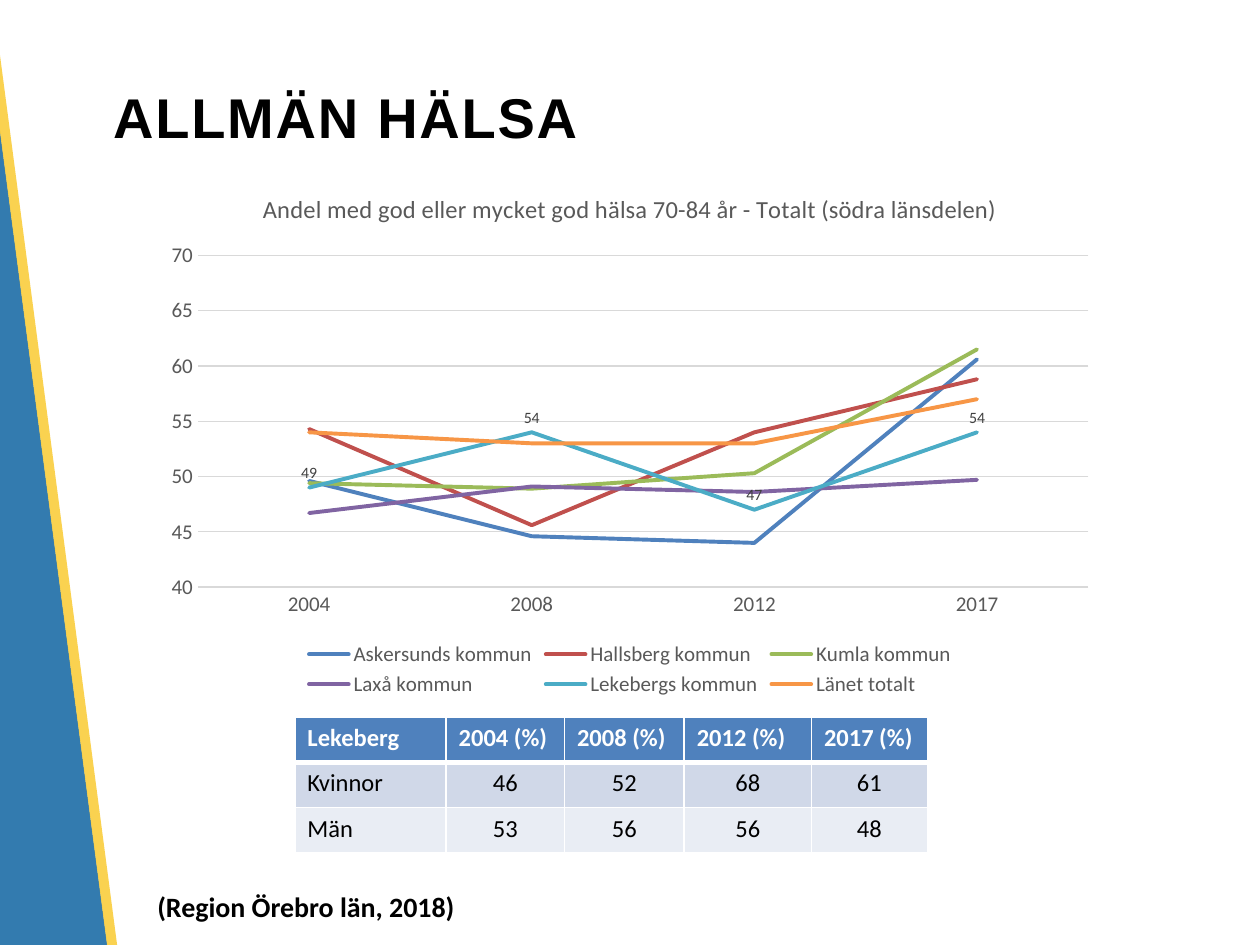
from typing import NamedTuple

from lxml import etree
from pptx import Presentation
from pptx.chart.data import CategoryChartData
from pptx.dml.color import RGBColor
from pptx.enum.chart import XL_CHART_TYPE as ChartType
from pptx.enum.chart import XL_LABEL_POSITION as LabelPosition
from pptx.enum.chart import XL_LEGEND_POSITION as LegendPosition
from pptx.enum.chart import XL_MARKER_STYLE as MarkerStyle
from pptx.enum.chart import XL_TICK_MARK as TickMark
from pptx.enum.shapes import MSO_SHAPE as Shape
from pptx.enum.text import MSO_ANCHOR as Anchor
from pptx.enum.text import PP_ALIGN as Align
from pptx.oxml.ns import qn
from pptx.util import Inches, Pt

BLACK = RGBColor(0x00, 0x00, 0x00)
WHITE = RGBColor(0xFF, 0xFF, 0xFF)
BLUE = RGBColor(0x00, 0x5B, 0x9C)
YELLOW = RGBColor(0xFA, 0xC8, 0x28)
GRID = RGBColor(0xD9, 0xD9, 0xD9)
AXIS_TEXT = RGBColor(0x59, 0x59, 0x59)
LABEL_TEXT = RGBColor(0x40, 0x40, 0x40)
HEADER_FILL = RGBColor(0x4F, 0x81, 0xBD)
BAND_FILLS = (RGBColor(0xD0, 0xD8, 0xE8), RGBColor(0xE9, 0xED, 0xF4))


class Stripe(NamedTuple):
    left: float
    top: float
    width: float
    height: float
    color: RGBColor
    opacity: int


class TextItem(NamedTuple):
    left: float
    top: float
    width: float
    height: float
    text: str
    font: str
    size: int
    anchor: Anchor


class Series(NamedTuple):
    name: str
    values: tuple
    color: RGBColor


STRIPES = (
    Stripe(-0.52, -1.64, 0.91, 11.33, BLUE, 80),
    Stripe(0.38, -1.73, 0.08, 11.32, YELLOW, 81),
)
TITLE = TextItem(0.8, 0.3, 8.65, 1.25, "ALLMÄN HÄLSA", "Arial", 32, Anchor.MIDDLE)
SOURCE = TextItem(1.15, 7.01, 2.72, 0.37, "(Region Örebro län, 2018)",
                  "Calibri", 16, Anchor.TOP)

CHART_TITLE = "Andel med god eller mycket god hälsa 70-84 år - Totalt (södra länsdelen)"
YEARS = ("2004", "2008", "2012", "2017")
LABELLED = "Lekebergs kommun"
SERIES = (
    Series("Askersunds kommun", (49.6, 44.6, 44, 60.6), RGBColor(0x4F, 0x81, 0xBD)),
    Series("Hallsberg kommun", (54.3, 45.6, 54, 58.8), RGBColor(0xC0, 0x50, 0x4D)),
    Series("Kumla kommun", (49.4, 48.9, 50.3, 61.5), RGBColor(0x9B, 0xBB, 0x59)),
    Series("Laxå kommun", (46.7, 49.1, 48.6, 49.7), RGBColor(0x80, 0x64, 0xA2)),
    Series(LABELLED, (49, 54, 47, 54), RGBColor(0x4B, 0xAC, 0xC6)),
    Series("Länet totalt", (54, 53, 53, 57), RGBColor(0xF7, 0x96, 0x46)),
)

COLUMN_WIDTHS = (1.2, 0.94, 0.95, 1.01, 0.92)
ROW_HEIGHT = 0.36
TABLE_ROWS = (
    ("Lekeberg", *(f"{year} (%)" for year in YEARS)),
    ("Kvinnor", "46", "52", "68", "61"),
    ("Män", "53", "56", "56", "48"),
)


def style_font(font, size: float, color: RGBColor, bold: bool = False,
               name: str = "Calibri") -> None:
    font.name, font.size, font.bold = name, Pt(size), bold
    font.color.rgb = color


def add_stripe(page, stripe: Stripe) -> None:
    shape = page.shapes.add_shape(Shape.RECTANGLE, *map(Inches, stripe[:4]))
    shape.rotation = 352.5
    shape.shadow.inherit = False
    shape.line.fill.background()
    shape.fill.solid()
    shape.fill.fore_color.rgb = stripe.color
    color = shape.fill._xPr.find(".//" + qn("a:srgbClr"))
    etree.SubElement(color, qn("a:alpha"), val=str(stripe.opacity * 1000))


def add_text(page, item: TextItem):
    box = page.shapes.add_textbox(*map(Inches, item[:4]))
    frame = box.text_frame
    frame.word_wrap = True
    frame.vertical_anchor = item.anchor
    frame.text = item.text
    span = frame.paragraphs[0].runs[0]
    style_font(span.font, item.size, BLACK, True, item.font)
    return span


def add_health_chart(page) -> None:
    data = CategoryChartData(number_format="0")
    data.categories = YEARS
    for series in SERIES:
        data.add_series(series.name, series.values)
    chart = page.shapes.add_chart(ChartType.LINE, Inches(1.21), Inches(1.35),
                                  Inches(7.58), Inches(4.22), data).chart
    style_font(chart.font, 10, BLACK)

    chart.has_title = True
    chart.chart_title.include_in_layout = False
    frame = chart.chart_title.text_frame
    frame.text = CHART_TITLE
    style_font(frame.paragraphs[0].runs[0].font, 14, AXIS_TEXT)

    chart.has_legend = True
    chart.legend.position = LegendPosition.BOTTOM
    chart.legend.include_in_layout = False
    style_font(chart.legend.font, 12, AXIS_TEXT)

    values = chart.value_axis
    values.minimum_scale, values.maximum_scale = 40, 70
    values.major_unit = 5
    values.tick_labels.number_format = "0"
    values.tick_labels.number_format_is_linked = False
    values.has_major_gridlines = True
    for axis in (chart.category_axis, values):
        axis.major_tick_mark = axis.minor_tick_mark = TickMark.NONE
        style_font(axis.tick_labels.font, 12, AXIS_TEXT)
    for line in (chart.category_axis.format.line, values.major_gridlines.format.line):
        line.color.rgb = GRID
        line.width = Pt(0.75)
    values.format.line.fill.background()

    plot = chart.plots[0]
    plot.vary_by_categories = False
    for series, drawn in zip(SERIES, plot.series):
        drawn.smooth = False
        drawn.marker.style = MarkerStyle.NONE
        drawn.format.line.color.rgb = series.color
        drawn.format.line.width = Pt(2.25)
        drawn._element.find(qn("c:spPr")).find(qn("a:ln")).set("cap", "rnd")
        if series.name == LABELLED:
            labels = drawn.data_labels
            labels.show_value = True
            labels.position = LabelPosition.ABOVE
            labels.number_format = "0"
            labels.number_format_is_linked = False
            style_font(labels.font, 9, LABEL_TEXT)


def add_border(cell, side: str, width: float) -> None:
    line = etree.Element(qn(f"a:ln{side}"), w=str(Pt(width)))
    fill = etree.SubElement(line, qn("a:solidFill"))
    etree.SubElement(fill, qn("a:srgbClr"), val=str(WHITE))
    properties = cell._tc.get_or_add_tcPr()
    properties.insert("LRTB".index(side), line)


def add_lekeberg_table(page) -> None:
    table = page.shapes.add_table(
        len(TABLE_ROWS), len(COLUMN_WIDTHS), Inches(2.34), Inches(5.69),
        Inches(sum(COLUMN_WIDTHS)), Inches(ROW_HEIGHT * len(TABLE_ROWS))).table
    for column, width in zip(table.columns, COLUMN_WIDTHS):
        column.width = Inches(width)
    for i, texts in enumerate(TABLE_ROWS):
        table.rows[i].height = Inches(ROW_HEIGHT)
        header = i == 0
        for j, text in enumerate(texts):
            cell = table.cell(i, j)
            cell.text = text
            para = cell.text_frame.paragraphs[0]
            para.alignment = Align.LEFT if header or j == 0 else Align.CENTER
            style_font(para.runs[0].font, 14, WHITE if header else BLACK, header)
            cell.fill.solid()
            cell.fill.fore_color.rgb = HEADER_FILL if header else BAND_FILLS[i - 1]
            for side in "LRTB":
                thick = (i, side) in ((0, "B"), (1, "T"))
                add_border(cell, side, 3 if thick else 1)


def main() -> None:
    deck = Presentation()
    deck.slide_width, deck.slide_height = Inches(10), Inches(7.5)
    page = deck.slides.add_slide(deck.slide_layouts[6])

    # Slanted stripes along the left edge
    for stripe in STRIPES:
        add_stripe(page, stripe)

    # Title with letter spacing of one point
    title = add_text(page, TITLE)
    title.font._element.set("spc", "100")

    # Table, source and chart
    add_lekeberg_table(page)
    add_text(page, SOURCE)
    add_health_chart(page)

    deck.save("out.pptx")


if __name__ == "__main__":
    main()
